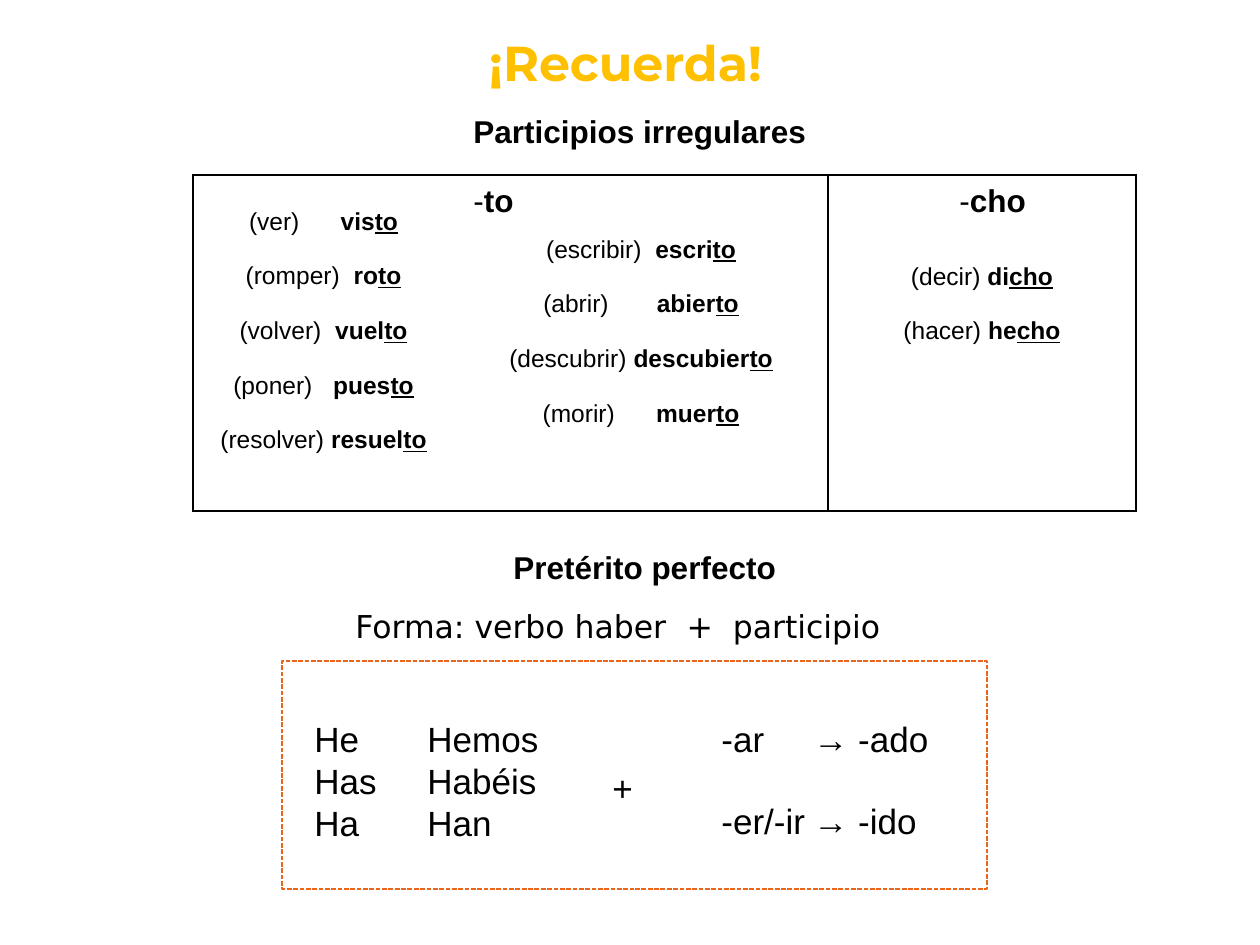
from pptx import Presentation
from pptx.dml.color import RGBColor
from pptx.enum.dml import MSO_LINE
from pptx.enum.shapes import MSO_SHAPE
from pptx.enum.text import MSO_ANCHOR, MSO_AUTO_SIZE, PP_ALIGN
from pptx.oxml.ns import qn
from pptx.util import Emu, Pt
from lxml.etree import SubElement

BLACK = RGBColor(0x00, 0x00, 0x00)
WHITE = RGBColor(0xFF, 0xFF, 0xFF)
GOLD = RGBColor(0xFF, 0xC0, 0x00)
ORANGE = RGBColor(0xEB, 0x64, 0x1B)
BOLD = {"bold": True}
ENDING = {"bold": True, "underline": True}

COLUMNS = [
    (261, 33, "LTB", [("ver", 6, "vis", "to"), ("romper", 2, "ro", "to"),
                      ("volver", 2, "vuel", "to"), ("poner", 3, "pues", "to"),
                      ("resolver", 1, "resuel", "to")]),
    (374, 61, "RTB", [("escribir", 2, "escri", "to"), ("abrir", 7, "abier", "to"),
                      ("descubrir", 1, "descubier", "to"), ("morir", 6, "muer", "to")]),
    (308, 88, "LRTB", [("decir", 1, "di", "cho"), ("hacer", 1, "he", "cho")]),
]


def px(n):
    """Turn pixels into EMU."""
    return Emu(round(n * 914400 / 126))


class Deck:
    """Holds the text style and the current slide."""

    def __init__(self, prs, font="Arial"):
        self.font = font
        self.s = prs.slides.add_slide(prs.slide_layouts[5])

    def run(self, p, text, size, spacing=0, **style):
        r = p.add_run()
        r.text = text
        values = {"name": self.font, "size": Pt(size), "bold": False, **style}
        color = values.pop("color", BLACK)
        for name, value in values.items():
            setattr(r.font, name, value)
        r.font.color.rgb = color
        if spacing:
            r._r.get_or_add_rPr().set("spc", str(round(spacing * 100)))

    def title(self, text, x, y, w, h, **style):
        sp = self.s.shapes.title
        sp.left, sp.top, sp.width, sp.height = map(px, (x, y, w, h))
        tf = sp.text_frame
        tf.auto_size = MSO_AUTO_SIZE.NONE
        tf.vertical_anchor = MSO_ANCHOR.TOP
        p = tf.paragraphs[0]
        p.alignment = PP_ALIGN.CENTER
        self.run(p, text, **style)

    def text(self, lines, x, y, w, h, size, tab=0, gap=0):
        tf = self.s.shapes.add_textbox(*map(px, (x, y, w, h))).text_frame
        tf.word_wrap = len(lines) > 1
        for i, runs in enumerate(lines):
            p = tf.add_paragraph() if i else tf.paragraphs[0]
            if i:
                p.space_before = Pt(gap)
            if tab:
                tabs = SubElement(p._p.get_or_add_pPr(), qn("a:tabLst"))
                SubElement(tabs, qn("a:tab"), pos=str(px(tab)), algn="l")
            for text, style in runs:
                self.run(p, text, size, **style)

    def border(self, cell, sides):
        tc_pr = cell._tc.get_or_add_tcPr()
        for side in "LRTB":
            ln = SubElement(tc_pr, qn(f"a:ln{side}"), w=str(Pt(1)))
            if side in sides:
                fill = SubElement(ln, qn("a:solidFill"))
                SubElement(fill, qn("a:srgbClr"), val=str(BLACK))
            else:
                SubElement(ln, qn("a:noFill"))

    def table(self, columns, x, y, h, size):
        w = sum(column[0] for column in columns)
        tbl = self.s.shapes.add_table(1, len(columns), *map(px, (x, y, w, h))).table
        tbl.first_row = tbl.horz_banding = False
        for i, (width, top, sides, verbs) in enumerate(columns):
            tbl.columns[i].width = px(width)
            cell = tbl.cell(0, i)
            cell.margin_top = px(top)
            self.border(cell, sides)
            cell.fill.solid()
            cell.fill.fore_color.rgb = WHITE
            for j, (verb, spaces, stem, ending) in enumerate(verbs):
                tf = cell.text_frame
                p = tf.add_paragraph() if j else tf.paragraphs[0]
                p.alignment = PP_ALIGN.CENTER
                if j:
                    p.space_before = Pt(15.5)
                self.run(p, f"({verb})", size)
                self.run(p, " ", size, spacing=(spaces - 1) * size * 0.28)
                self.run(p, stem, size, **BOLD)
                self.run(p, ending, size, **ENDING)

    def frame(self, x, y, w, h, color):
        sp = self.s.shapes.add_shape(MSO_SHAPE.RECTANGLE, *map(px, (x, y, w, h)))
        sp.shadow.inherit = False
        sp.fill.background()
        sp.line.color.rgb = color
        sp.line.width = Pt(0.9)
        sp.line.dash_style = MSO_LINE.SQUARE_DOT


def main():
    prs = Presentation()
    prs.slide_width, prs.slide_height = px(1260), px(945)
    deck = Deck(prs)
    deck.title("¡Recuerda!", 253, 26, 745, 72, size=28, name="Montserrat", color=GOLD, bold=True)
    deck.table(COLUMNS, 193, 175, 336, 14)
    deck.text([[("-ar\t→ -ado", {})], [("-er/-ir\t→ -ido", {})]],
              709, 711, 517, 140, 20, tab=92, gap=23)
    dejavu = {"name": "DejaVu Sans"}
    wide = {"spacing": 5.7, **dejavu}
    deck.text([[("Forma: verbo haber", dejavu), (" ", wide), ("+", dejavu),
                (" ", wide), ("participio", dejavu)]], 343, 601, 562, 50, 18)
    deck.text([[("Participios irregulares", BOLD)]], 461, 106, 362, 50, 18)
    deck.text([[("Pretérito perfecto", BOLD)]], 501, 542, 291, 50, 18)
    deck.text([[(line, {})] for line in ("He\tHemos", "Has\tHabéis", "Ha\tHan")],
              302, 711, 260, 140, 20, tab=113)
    deck.text([[("+", {})]], 600, 760, 45, 55, 20)
    deck.frame(282, 661, 705, 228, ORANGE)
    for ending, x, w in (("to", 461, 66), ("cho", 947, 93)):
        deck.text([[("-", {}), (ending, BOLD)]], x, 175, w, 50, 18)
    prs.save("out.pptx")


if __name__ == "__main__":
    main()
